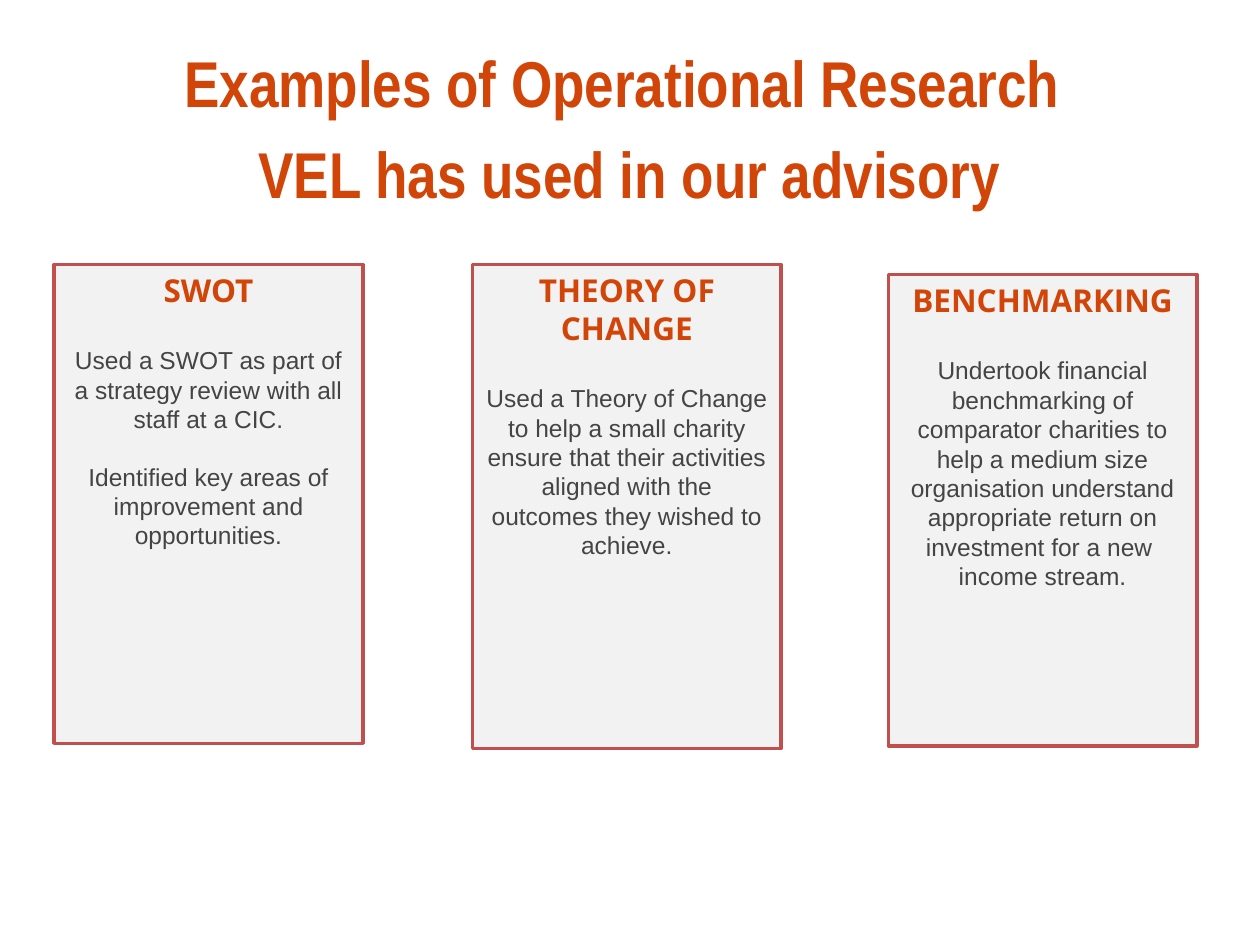
from pptx import Presentation
from pptx.dml.color import RGBColor
from pptx.enum.shapes import MSO_SHAPE
from pptx.enum.text import MSO_ANCHOR, PP_ALIGN
from pptx.util import Inches, Pt

ORANGE, GREY, PALE, RED = "D24508", "444444", "F2F2F2", "C0504D"

CARDS = [
    (0.43, 2.1, 3.8, "SWOT", 16, [
        "Used a SWOT as part of a strategy review with all staff at a CIC.",
        "Identified key areas of improvement and opportunities."]),
    (3.75, 2.1, 3.84, "THEORY OF CHANGE", 0, [
        "Used a Theory of Change to help a small charity ensure that their "
        "activities aligned with the outcomes they wished to achieve."]),
    (7.05, 2.18, 3.74, "BENCHMARKING", 0, [
        "Undertook financial benchmarking of comparator charities to help a "
        "medium size organisation understand appropriate return on "
        "investment for a new ",
        "income stream."]),
]


def color(code):
    return RGBColor.from_string(code)


def write(frame, text, font, size, code, bold=False, gap=0):
    first = not frame.paragraphs[0].runs
    para = frame.paragraphs[0] if first else frame.add_paragraph()
    para.alignment = PP_ALIGN.CENTER
    if not first:
        para.space_before = Pt(gap)
    run = para.add_run()
    run.text = text
    run.font.name = font
    run.font.size = Pt(size)
    run.font.bold = bold
    run.font.color.rgb = color(code)


def add_title(slide, lines):
    box = slide.shapes.add_textbox(
        Inches(0.62), Inches(0.29), Inches(8.75), Inches(0.7))
    frame = box.text_frame
    frame.word_wrap = True
    for line in lines:
        write(frame, line, "Arial Narrow", 37, ORANGE, True, 7.4)


def add_card(slide, left, top, height, head, gap, body):
    card = slide.shapes.add_shape(
        MSO_SHAPE.RECTANGLE, Inches(left), Inches(top),
        Inches(2.45), Inches(height))
    card.shadow.inherit = False
    card.fill.solid()
    card.fill.fore_color.rgb = color(PALE)
    card.line.color.rgb = color(RED)
    card.line.width = Pt(2)
    frame = card.text_frame
    frame.word_wrap = True
    frame.vertical_anchor = MSO_ANCHOR.TOP
    write(frame, head, "Open Sans", 18, ORANGE, True)
    for index, text in enumerate(body):
        write(frame, text, "Arial", 14, GREY, gap=gap if index else 21)


def main():
    deck = Presentation()
    deck.slide_width, deck.slide_height = Inches(10), Inches(7.5)
    slide = deck.slides.add_slide(deck.slide_layouts[6])
    add_title(slide, ["Examples of Operational Research ",
                      "VEL has used in our advisory"])
    for card in CARDS:
        add_card(slide, *card)
    deck.save("out.pptx")


if __name__ == "__main__":
    main()
